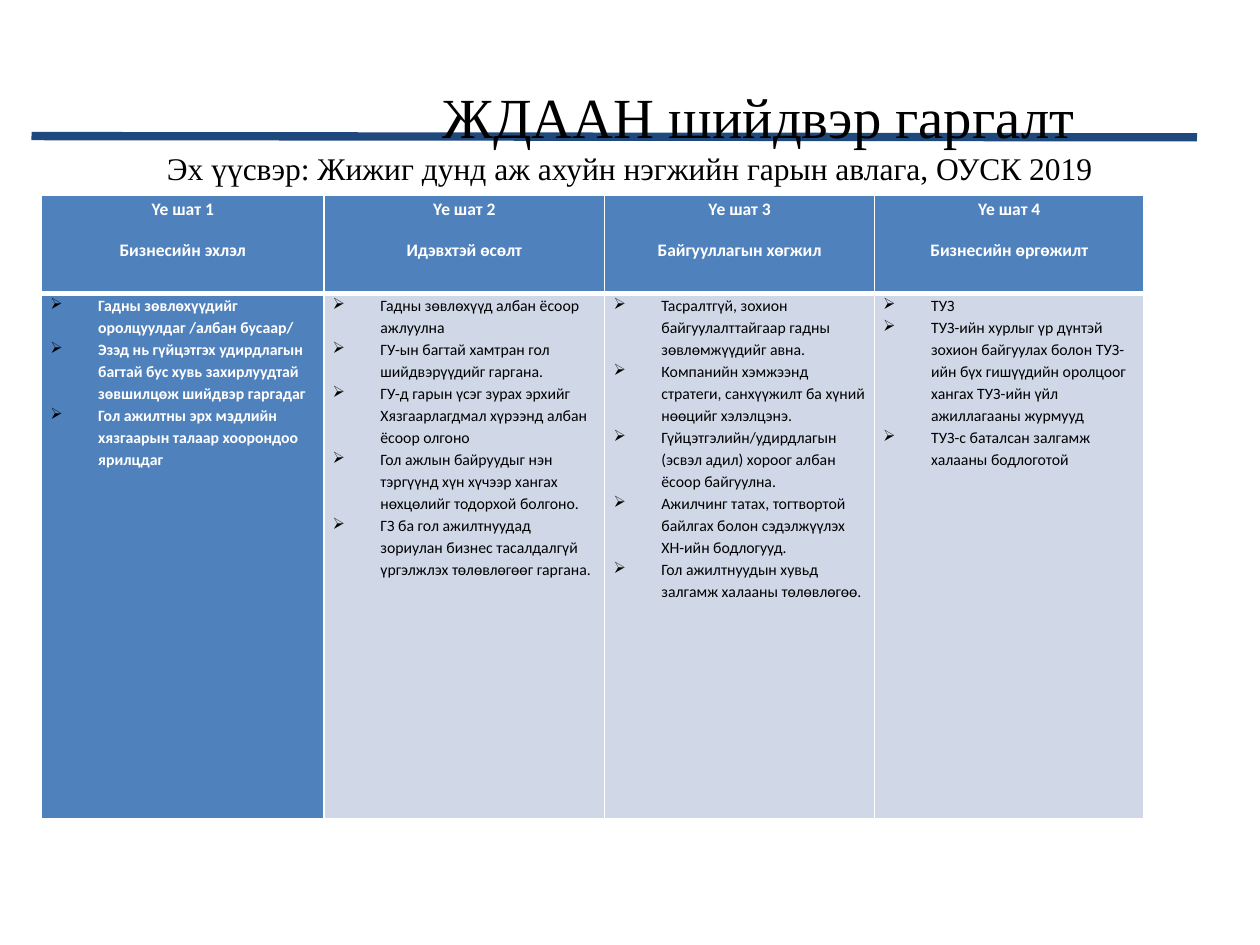
from dataclasses import dataclass
from lxml.etree import SubElement
from pptx import Presentation
from pptx.dml.color import RGBColor
from pptx.enum.shapes import MSO_CONNECTOR
from pptx.enum.text import MSO_ANCHOR, PP_ALIGN
from pptx.oxml import parse_xml
from pptx.oxml.ns import nsdecls, qn
from pptx.util import Inches, Pt


@dataclass(frozen=True)
class Theme:
    serif: str = "Times New Roman"
    sans: str = "Calibri"
    black: str = "000000"
    white: str = "FFFFFF"
    navy: str = "1F497D"
    blue: str = "4F81BD"
    pale: str = "D0D8E8"
    title: float = 32.4
    source: float = 18
    head: float = 10
    body: float = 9


T = Theme()
TITLES = [
    ("ЖДААН шийдвэр гаргалт", T.title, (2.58, 0.66, 6.88, 0.52)),
    ("Эх үүсвэр: Жижиг дунд аж ахуйн нэгжийн гарын авлага, ОУСК 2019",
     T.source, (0.54, 1.19, 8.92, 0.29)),
]
STAGES = [
    ("Үе шат 1", "Бизнесийн эхлэл", [
        "Гадны зөвлөхүүдийг оролцуулдаг /албан бусаар/",
        "Эзэд нь гүйцэтгэх удирдлагын багтай бус хувь захирлуудтай "
        "зөвшилцөж шийдвэр гаргадаг",
        "Гол ажилтны эрх мэдлийн хязгаарын талаар хоорондоо ярилцдаг",
    ]),
    ("Үе шат 2", "Идэвхтэй өсөлт", [
        "Гадны зөвлөхүүд албан ёсоор ажлуулна",
        "ГУ-ын багтай хамтран гол шийдвэрүүдийг гаргана.",
        "ГУ-д гарын үсэг зурах эрхийг Хязгаарлагдмал хүрээнд албан ёсоор олгоно",
        "Гол ажлын байруудыг нэн тэргүүнд хүн хүчээр хангах нөхцөлийг "
        "тодорхой болгоно.",
        "ГЗ ба гол ажилтнуудад зориулан бизнес тасалдалгүй үргэлжлэх "
        "төлөвлөгөөг гаргана.",
    ]),
    ("Үе шат 3", "Байгууллагын хөгжил", [
        "Тасралтгүй, зохион байгуулалттайгаар гадны зөвлөмжүүдийг авна.",
        "Компанийн хэмжээнд стратеги, санхүүжилт ба хүний нөөцийг хэлэлцэнэ.",
        "Гүйцэтгэлийн/удирдлагын (эсвэл адил) хороог албан ёсоор байгуулна.",
        "Ажилчинг татах, тогтвортой байлгах болон сэдэлжүүлэх ХН-ийн бодлогууд.",
        "Гол ажилтнуудын хувьд залгамж халааны төлөвлөгөө.",
    ]),
    ("Үе шат 4", "Бизнесийн өргөжилт", [
        "ТУЗ",
        "ТУЗ-ийн хурлыг үр дүнтэй зохион байгуулах болон ТУЗ-ийн бүх "
        "гишүүдийн оролцоог хангах ТУЗ-ийн үйл ажиллагааны журмууд",
        "ТУЗ-с баталсан залгамж халааны бодлоготой",
    ]),
]
COLS = (2.24, 2.23, 2.14, 2.14)
ROWS = (0.78, 4.17)


def style(para, face, size, color, bold=False):
    font = para.font
    font.name, font.size, font.bold = face, Pt(size), bold
    font.color.rgb = RGBColor.from_string(color)


def bullet(para):
    props = para._p.get_or_add_pPr()
    props.set("marL", str(Inches(0.38)))
    props.set("indent", str(-Inches(0.38)))
    tint = SubElement(props, qn("a:buClr"))
    SubElement(tint, qn("a:srgbClr"), val=T.black)
    SubElement(props, qn("a:buChar"), char="➢")


def border(cell, base):
    props = cell._tc.get_or_add_tcPr()
    for spot, (side, width) in enumerate(zip("LRTB", (1, 1, 1, base))):
        props.insert(spot, parse_xml(
            f'<a:ln{side} {nsdecls("a")} w="{Pt(width)}"><a:solidFill>'
            f'<a:srgbClr val="{T.white}"/></a:solidFill></a:ln{side}>'))


def fill(cell, lines, color, ink, size, bold, head):
    cell.margin_left = cell.margin_right = Inches(0.07)
    cell.margin_top = cell.margin_bottom = 0
    cell.fill.solid()
    cell.fill.fore_color.rgb = RGBColor.from_string(color)
    border(cell, 3 if head else 1)
    frame = cell.text_frame
    frame.text = "\n".join(lines)
    for para in frame.paragraphs:
        if head:
            para.alignment = PP_ALIGN.CENTER
            para.space_after = Pt(10)
        else:
            bullet(para)
        para.line_spacing = 1.15
        style(para, T.sans, size, ink, bold)


def add_rule(slide):
    rule = slide.shapes.add_connector(
        MSO_CONNECTOR.STRAIGHT,
        Inches(0.25), Inches(1.08), Inches(9.5), Inches(1.09))
    rule.line.color.rgb = RGBColor.from_string(T.navy)
    rule.line.width = Pt(4.75)
    SubElement(rule._element.spPr, qn("a:effectLst"))


def add_title(slide, text, size, area):
    frame = slide.shapes.add_textbox(*map(Inches, area)).text_frame
    frame.word_wrap = True
    frame.vertical_anchor = MSO_ANCHOR.MIDDLE
    frame.margin_top = frame.margin_bottom = 0
    frame.text = text
    para = frame.paragraphs[0]
    para.alignment = PP_ALIGN.CENTER
    style(para, T.serif, size, T.black)


def add_stages(slide):
    table = slide.shapes.add_table(
        len(ROWS), len(COLS), Inches(0.33), Inches(1.55),
        Inches(sum(COLS)), Inches(sum(ROWS))).table
    for row, size in zip(table.rows, ROWS):
        row.height = Inches(size)
    for col, size in zip(table.columns, COLS):
        col.width = Inches(size)
    for num, (stage, name, points) in enumerate(STAGES):
        first = num == 0
        fill(table.cell(0, num), (stage, name), T.blue, T.white,
             T.head, True, True)
        fill(table.cell(1, num), points, T.blue if first else T.pale,
             T.white if first else T.black, T.body, first, False)


def main():
    deck = Presentation()
    deck.slide_width, deck.slide_height = Inches(10), Inches(7.5)
    slide = deck.slides.add_slide(deck.slide_layouts[6])
    add_rule(slide)
    for item in TITLES:
        add_title(slide, *item)
    add_stages(slide)
    deck.save("out.pptx")


if __name__ == "__main__":
    main()
